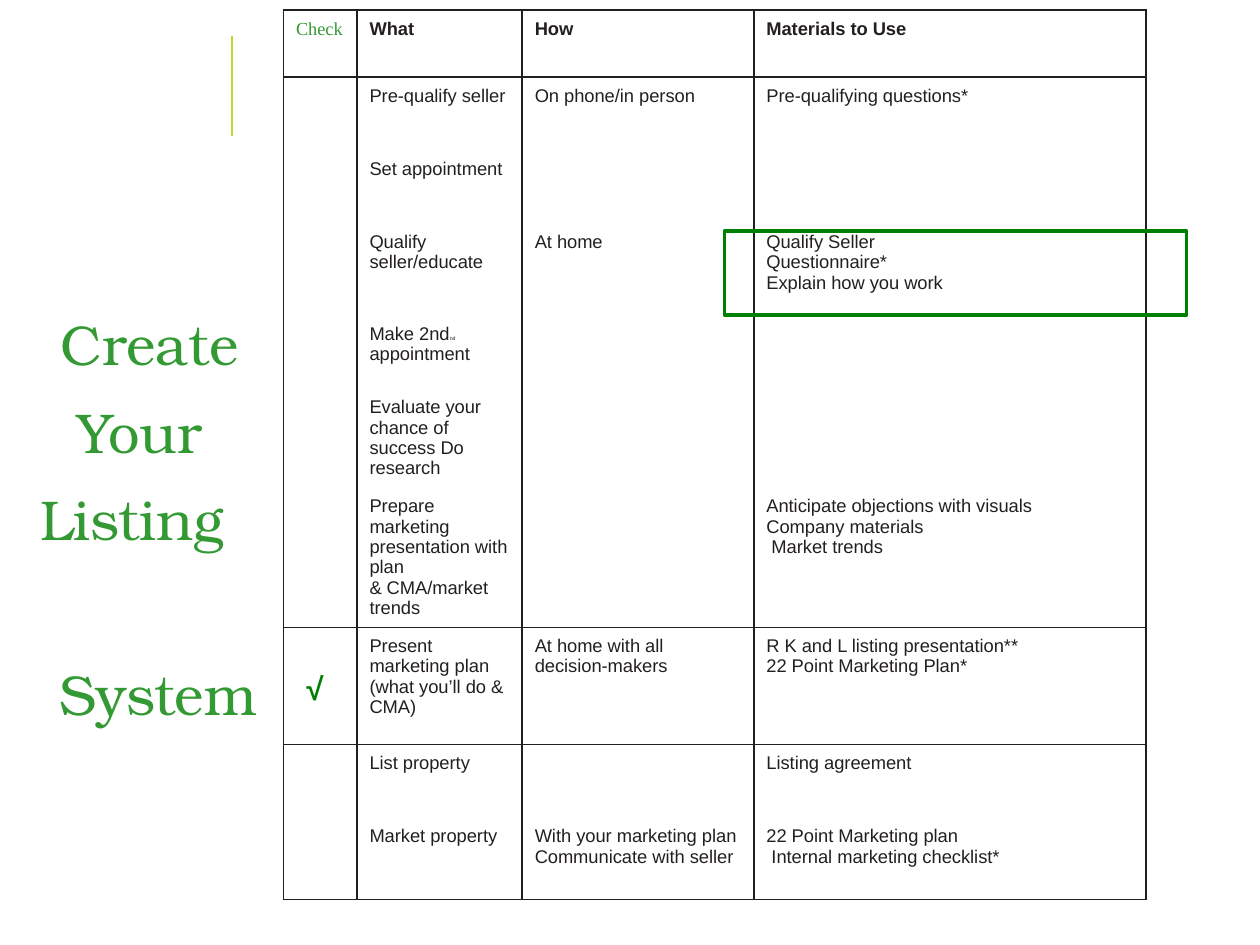
from dataclasses import dataclass

from lxml.etree import SubElement
from pptx import Presentation
from pptx.dml.color import RGBColor
from pptx.enum.shapes import MSO_CONNECTOR, MSO_SHAPE
from pptx.enum.text import MSO_ANCHOR, PP_ALIGN
from pptx.oxml.ns import qn
from pptx.util import Pt


@dataclass(frozen=True)
class Theme:
    ink: str = "231F20"
    title_green: str = "339933"
    mark_green: str = "008000"
    lime: str = "C1D72D"
    body_font: str = "Arial"
    check_font: str = "Times New Roman"
    title_font: str = "TeX Gyre Bonum"
    body_size: float = 10.5
    tiny_size: float = 3
    title_size: float = 32
    mark_size: float = 18


THEME = Theme()


@dataclass(frozen=True)
class Style:
    font: str = THEME.body_font
    size: float = THEME.body_size
    color: str = THEME.ink
    bold: bool = False


@dataclass(frozen=True)
class Span:
    text: str
    style: Style


@dataclass(frozen=True)
class TitleLine:
    text: str
    left_margin: float = 0
    right_margin: float = 0
    space_before: float = 0


BODY = Style()
HEADING = Style(bold=True)
TINY = Style(size=THEME.tiny_size)
CHECK = Style(THEME.check_font, color=THEME.title_green)
TITLE = Style(THEME.title_font, THEME.title_size, THEME.title_green)
MARK = Style(size=THEME.mark_size, color=THEME.mark_green, bold=True)

TITLE_LINES = (
    TitleLine("Create", left_margin=9),
    TitleLine("Your", right_margin=2),
    TitleLine("Listing", right_margin=11),
    TitleLine("System", left_margin=19, space_before=50),
)

COLUMN_WIDTHS = (42, 94.4, 132.4, 224)
ROW_HEIGHTS = (38.2, 41.8, 41.8, 52.6, 41.8, 52.6, 62.6, 67, 41.8, 46.8)
RULED_ROWS = {0, 1, 7, 8, 10}  # row edges that carry a horizontal rule

# One entry per row, one string per cell; a line break starts a new paragraph.
ROWS = (
    ("Check", "What", "How", "Materials to Use"),
    ("", "Pre-qualify seller", "On phone/in person", "Pre-qualifying questions*"),
    ("", "Set appointment", "", ""),
    ("", "Qualify seller/educate", "At home",
     "Qualify Seller\nQuestionnaire*\nExplain how you work"),
    ("", (Span("Make 2nd", BODY), Span("nd ", TINY), Span("appointment", BODY)), "", ""),
    ("", "Evaluate your chance of success Do research", "", ""),
    ("", "Prepare marketing presentation with plan\n& CMA/market trends", "",
     "Anticipate objections with visuals\nCompany materials\n Market trends"),
    ("", "Present marketing plan\n(what you’ll do & CMA)",
     "At home with all decision-makers",
     "R K and L listing presentation**\n22 Point Marketing Plan*"),
    ("", "List property", "", "Listing agreement"),
    ("", "Market property", "With your marketing plan\nCommunicate with seller",
     "22 Point Marketing plan\n Internal marketing checklist*"),
)


def add_span(para, text: str, style: Style) -> None:
    span = para.add_run()
    span.text = text
    span.font.name = style.font
    span.font.size = Pt(style.size)
    span.font.bold = style.bold
    span.font.color.rgb = RGBColor.from_string(style.color)


def fill_cell(cell, content: str | tuple[Span, ...], style: Style) -> None:
    cell.margin_left = cell.margin_right = Pt(7.2)
    cell.margin_top = cell.margin_bottom = Pt(5)
    cell.vertical_anchor = MSO_ANCHOR.TOP
    if not content:
        return
    frame = cell.text_frame
    if isinstance(content, tuple):
        for span in content:
            add_span(frame.paragraphs[0], span.text, span.style)
        return
    for index, line in enumerate(content.split("\n")):
        para = frame.add_paragraph() if index else frame.paragraphs[0]
        add_span(para, line, style)


def set_borders(cell, top: bool, bottom: bool) -> None:
    """Rule both sides of the cell, and its top and bottom where asked."""
    properties = cell._tc.get_or_add_tcPr()
    edges = (("a:lnL", True), ("a:lnR", True), ("a:lnT", top), ("a:lnB", bottom))
    for tag, ruled in edges:
        line = SubElement(properties, qn(tag), w=str(Pt(1) if ruled else 0))
        if ruled:
            fill = SubElement(line, qn("a:solidFill"))
            SubElement(fill, qn("a:srgbClr"), val=THEME.ink)
        else:
            SubElement(line, qn("a:noFill"))
    cell.fill.background()


def add_checklist(page) -> None:
    table = page.shapes.add_table(
        len(ROWS), len(COLUMN_WIDTHS), Pt(162), Pt(5.8),
        Pt(sum(COLUMN_WIDTHS)), Pt(sum(ROW_HEIGHTS))).table
    table.first_row = table.horz_banding = False
    for column, width in zip(table.columns, COLUMN_WIDTHS):
        column.width = Pt(width)
    for row_index, (row, height) in enumerate(zip(table.rows, ROW_HEIGHTS)):
        row.height = Pt(height)
        for column_index, content in enumerate(ROWS[row_index]):
            cell = table.cell(row_index, column_index)
            style = BODY
            if row_index == 0:
                style = HEADING if column_index else CHECK
            fill_cell(cell, content, style)
            set_borders(cell, row_index in RULED_ROWS, row_index + 1 in RULED_ROWS)


def add_accent_line(page) -> None:
    line = page.shapes.add_connector(
        MSO_CONNECTOR.STRAIGHT, Pt(132.6), Pt(20.8), Pt(132.6), Pt(77.6))
    line.line.color.rgb = RGBColor.from_string(THEME.lime)
    line.line.width = Pt(0.75)
    SubElement(line._element.spPr, qn("a:effectLst"))


def add_title(page) -> None:
    box = page.shapes.add_textbox(Pt(3), Pt(162), Pt(156), Pt(210))
    frame = box.text_frame
    frame.word_wrap = True
    for index, line in enumerate(TITLE_LINES):
        para = frame.add_paragraph() if index else frame.paragraphs[0]
        para.alignment = PP_ALIGN.CENTER
        para.line_spacing = Pt(50)
        if line.space_before:
            para.space_before = Pt(line.space_before)
        properties = para._p.get_or_add_pPr()
        properties.set("marL", str(Pt(line.left_margin)))
        properties.set("marR", str(Pt(line.right_margin)))
        add_span(para, line.text, TITLE)


def add_highlight(page) -> None:
    frame = page.shapes.add_shape(
        MSO_SHAPE.RECTANGLE, Pt(414), Pt(132), Pt(264), Pt(48))
    frame.shadow.inherit = False
    frame.fill.background()
    frame.line.color.rgb = RGBColor.from_string(THEME.mark_green)
    frame.line.width = Pt(2)


def add_check_mark(page) -> None:
    box = page.shapes.add_textbox(Pt(168), Pt(378.6), Pt(24.4), Pt(29))
    box.text_frame.word_wrap = False
    add_span(box.text_frame.paragraphs[0], "√", MARK)


def main() -> None:
    deck = Presentation()
    deck.slide_width, deck.slide_height = Pt(720), Pt(540)
    page = deck.slides.add_slide(deck.slide_layouts[6])
    add_accent_line(page)
    add_checklist(page)
    add_title(page)
    add_highlight(page)
    add_check_mark(page)
    deck.save("out.pptx")


if __name__ == "__main__":
    main()
